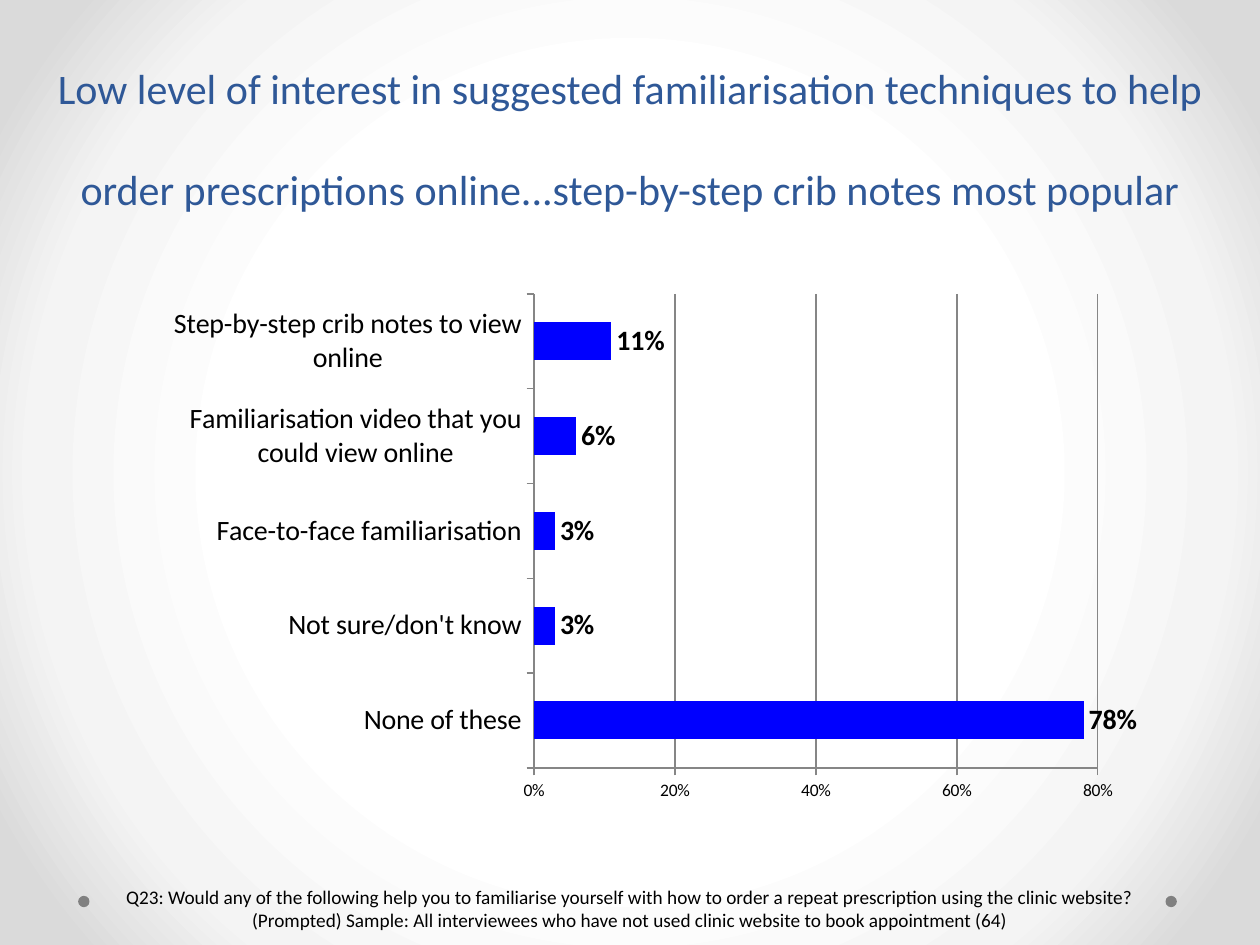
from pptx import Presentation
from pptx.chart.data import CategoryChartData
from pptx.dml.color import RGBColor
from pptx.enum.chart import XL_CHART_TYPE, XL_LABEL_POSITION, XL_TICK_MARK
from pptx.enum.shapes import MSO_SHAPE
from pptx.enum.text import MSO_ANCHOR, PP_ALIGN
from pptx.oxml import parse_xml
from pptx.oxml.ns import nsdecls, qn
from pptx.util import Inches, Pt

BAR = XL_CHART_TYPE.BAR_CLUSTERED
OUTSIDE_END = XL_LABEL_POSITION.OUTSIDE_END
TICK_OUT = XL_TICK_MARK.OUTSIDE
OVAL = MSO_SHAPE.OVAL
BOTTOM = MSO_ANCHOR.BOTTOM
CENTER = PP_ALIGN.CENTER

THEME = {
    "font": "Calibri",
    "title": RGBColor.from_string("2F5897"),
    "text": RGBColor.from_string("000000"),
    "bar": RGBColor.from_string("0000FF"),
    "dot": RGBColor.from_string("808080"),
    "axis": RGBColor.from_string("868686"),
    "background": [(0, "FFFFFF"), (50, "FFFFFF"), (76, "F4F4F4"), (92, "DADADA"), (100, "DADADA")],
    "title_size": Pt(24),
    "title_spacing": Pt(58),
    "label_size": Pt(16),
    "note_size": Pt(11),
    "axis_size": Pt(10),
}


def apply(target, values):
    for name, value in values.items():
        setattr(target, name, value)


def style_font(font, size, color, bold=False):
    apply(font, {"name": THEME["font"], "size": size, "bold": bold})
    font.color.rgb = color


deck = Presentation()
apply(deck, {"slide_width": Inches(10), "slide_height": Inches(7.5)})
page = deck.slides.add_slide(deck.slide_layouts[5])

page.background.fill.gradient()
gradient = page._element.find(".//" + qn("a:gradFill"))
for child in list(gradient):
    gradient.remove(child)
stops = "".join(
    f'<a:gs pos="{position * 1000}"><a:srgbClr val="{color}"/></a:gs>'
    for position, color in THEME["background"]
)
gradient.append(parse_xml(f'<a:gsLst {nsdecls("a")}>{stops}</a:gsLst>'))
gradient.append(parse_xml(
    f'<a:path {nsdecls("a")} path="circle">'
    '<a:fillToRect l="50000" t="50000" r="50000" b="50000"/></a:path>'
))

for left in (9.25, 0.62):
    dot = page.shapes.add_shape(OVAL, Inches(left), Inches(7.11), Inches(0.09), Inches(0.09))
    dot.shadow.inherit = False
    dot.fill.solid()
    dot.fill.fore_color.rgb = THEME["dot"]
    dot.line.fill.background()

title = page.shapes.title
apply(title, {"left": 0, "top": 0, "width": Inches(10), "height": Inches(1.75)})
apply(title.text_frame, {
    "text": "Low level of interest in suggested familiarisation techniques to help "
            "order prescriptions online...step-by-step crib notes most popular",
    "vertical_anchor": BOTTOM,
    "word_wrap": True,
})
para = title.text_frame.paragraphs[0]
apply(para, {"alignment": CENTER, "line_spacing": THEME["title_spacing"]})
style_font(para.runs[0].font, THEME["title_size"], THEME["title"])

note = page.shapes.add_textbox(0, Inches(6.98), Inches(10), Inches(0.47))
apply(note.text_frame, {
    "text": "Q23: Would any of the following help you to familiarise yourself with how to "
            "order a repeat prescription using the clinic website?\n"
            "(Prompted) Sample: All interviewees who have not used clinic website to book appointment (64)",
    "word_wrap": True,
})
for para in note.text_frame.paragraphs:
    para.alignment = CENTER
    style_font(para.runs[0].font, THEME["note_size"], THEME["text"])

answers = {
    "None of these": 0.78,
    "Not sure/don't know": 0.03,
    "Face-to-face familiarisation": 0.03,
    "Familiarisation video that you could view online": 0.06,
    "Step-by-step crib notes to view online": 0.11,
}
data = CategoryChartData(number_format="0%")
data.categories = list(answers)
data.add_series("Series 1", list(answers.values()))
chart = page.shapes.add_chart(
    BAR, Inches(1.38), Inches(2.25), Inches(7.72), Inches(4.18), data
).chart
apply(chart, {"has_legend": False, "has_title": False})
style_font(chart.font, THEME["axis_size"], THEME["text"])

plot = chart.plots[0]
apply(plot, {"gap_width": 150, "vary_by_categories": False, "has_data_labels": True})
fill = plot.series[0].format.fill
fill.solid()
fill.fore_color.rgb = THEME["bar"]
apply(plot.data_labels, {
    "show_value": True,
    "number_format": "0%",
    "number_format_is_linked": False,
    "position": OUTSIDE_END,
})
style_font(plot.data_labels.font, THEME["label_size"], THEME["text"], True)

apply(chart.value_axis, {
    "minimum_scale": 0,
    "maximum_scale": 0.8,
    "major_unit": 0.2,
    "has_major_gridlines": True,
})
apply(chart.value_axis.tick_labels, {"number_format": "0%", "number_format_is_linked": False})
axis_sizes = (
    (chart.category_axis, THEME["label_size"]),
    (chart.value_axis, THEME["axis_size"]),
)
for axis, size in axis_sizes:
    axis.major_tick_mark = TICK_OUT
    style_font(axis.tick_labels.font, size, THEME["text"])
    axis.format.line.color.rgb = THEME["axis"]
chart.value_axis.major_gridlines.format.line.color.rgb = THEME["axis"]

plot_area = chart._chartSpace.find(".//" + qn("c:plotArea"))
for layout in plot_area.findall(qn("c:layout")):
    plot_area.remove(layout)
plot_area.insert(0, parse_xml(
    f'<c:layout {nsdecls("c")}><c:manualLayout><c:layoutTarget val="inner"/>'
    '<c:xMode val="edge"/><c:yMode val="edge"/>'
    '<c:x val="0.37"/><c:y val="0.02"/><c:w val="0.58"/><c:h val="0.9"/>'
    '</c:manualLayout></c:layout>'
))

deck.save("out.pptx")
